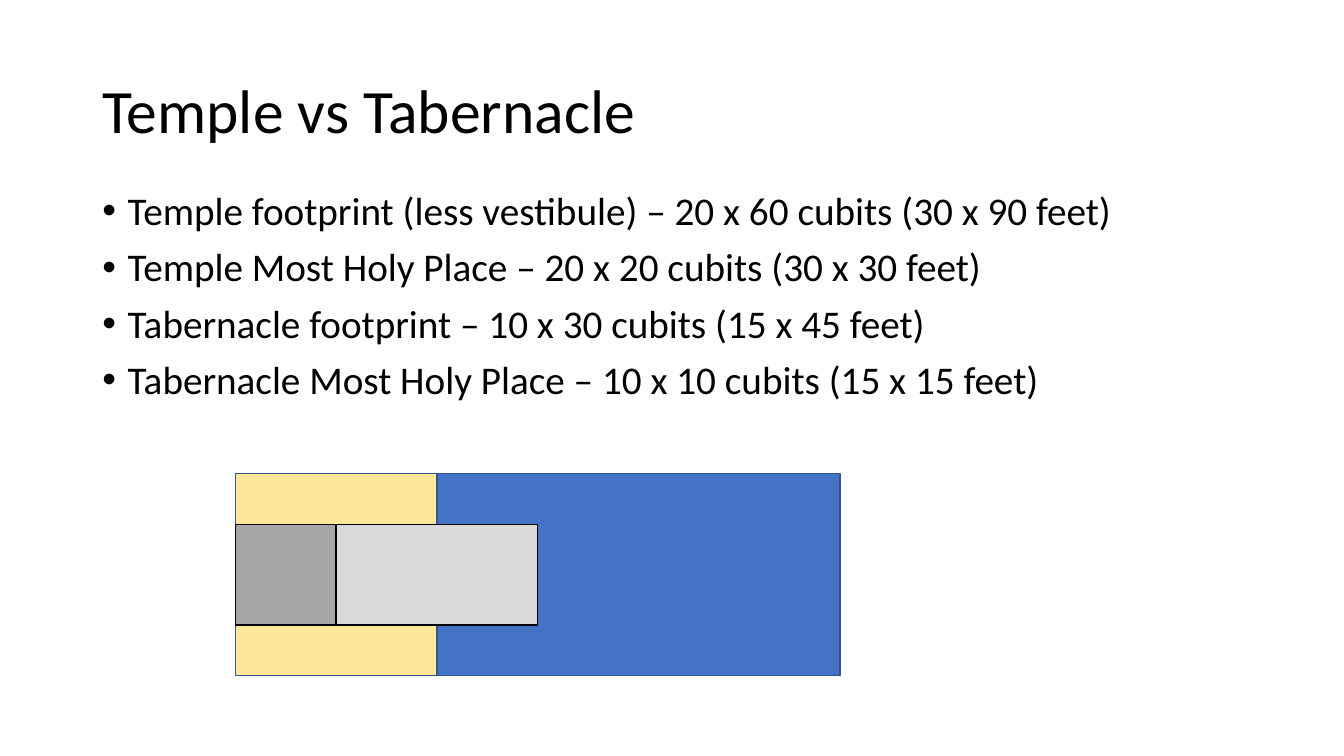
from lxml import etree
from pptx import Presentation
from pptx.dml.color import RGBColor
from pptx.enum.shapes import MSO_SHAPE
from pptx.enum.text import MSO_ANCHOR
from pptx.oxml.ns import qn
from pptx.util import Cm, Pt

RECT = MSO_SHAPE.RECTANGLE
TOP, MIDDLE = MSO_ANCHOR.TOP, MSO_ANCHOR.MIDDLE

COLORS = {
    "ink": "000000",
    "blue": "4472C4",
    "navy": "325491",
    "gold": "FFE699",
    "silver": "D9D9D9",
    "gray": "A6A6A6",
}
CUBIT = 0.254  # drawing scale: centimetres per cubit
LEFT, AXIS = 5.93, 14.48  # shared west wall and centre line of the plans


class Deck:
    font = "Calibri"

    def __init__(self, width, height):
        self.file = Presentation()
        self.file.slide_width, self.file.slide_height = Cm(width), Cm(height)
        self.slide = self.file.slides.add_slide(self.file.slide_layouts[6])

    def color(self, name):
        return RGBColor.from_string(COLORS[name])

    def text(self, box, lines, size, anchor=TOP, before=0, bullet=False):
        frame = self.slide.shapes.add_textbox(*map(Cm, box)).text_frame
        frame.word_wrap = True
        frame.vertical_anchor = anchor
        for i, line in enumerate(lines):
            par = frame.add_paragraph() if i else frame.paragraphs[0]
            run = par.add_run()
            run.text = line
            run.font.color.rgb = self.color("ink")
            for key, value in {"name": self.font, "size": Pt(size)}.items():
                setattr(run.font, key, value)
            for key, value in {"line_spacing": 0.9, "space_before": Pt(before)}.items():
                setattr(par, key, value)
            if bullet:
                self.bullet(par)

    def bullet(self, par):
        props = par._p.get_or_add_pPr()
        indent = Cm(0.64)
        props.set("marL", str(indent))
        props.set("indent", str(-indent))
        etree.SubElement(props, qn("a:buFont")).set("typeface", "Arial")
        etree.SubElement(props, qn("a:buChar")).set("char", "•")

    def plan(self, length, width, fill, line):
        """Draw a floor plan, sized in cubits, centred on the axis."""
        long, wide = length * CUBIT, width * CUBIT
        box = LEFT, AXIS - wide / 2, long, wide
        shape = self.slide.shapes.add_shape(RECT, *map(Cm, box))
        shape.shadow.inherit = False
        shape.fill.solid()
        shape.fill.fore_color.rgb = self.color(fill)
        shape.line.color.rgb = self.color(line)
        shape.line.width = Pt(1)


def main():
    deck = Deck(33.87, 19.05)

    # Title
    deck.text((2.33, 1.01, 29.21, 3.68), ["Temple vs Tabernacle"], 44, MIDDLE)

    # Dimensions
    facts = [
        "Temple footprint (less vestibule) – 20 x 60 cubits (30 x 90 feet)",
        "Temple Most Holy Place – 20 x 20 cubits (30 x 30 feet)",
        "Tabernacle footprint – 10 x 30 cubits (15 x 45 feet)",
        "Tabernacle Most Holy Place – 10 x 10 cubits (15 x 15 feet)",
    ]
    deck.text((2.33, 4.7, 29.21, 12.47), facts, 28, before=10, bullet=True)

    # Floor plans, each footprint followed by its Most Holy Place
    plans = [
        (60, 20, "blue", "navy"),
        (20, 20, "gold", "navy"),
        (30, 10, "silver", "ink"),
        (10, 10, "gray", "ink"),
    ]
    for plan in plans:
        deck.plan(*plan)

    deck.file.save("out.pptx")


if __name__ == "__main__":
    main()
